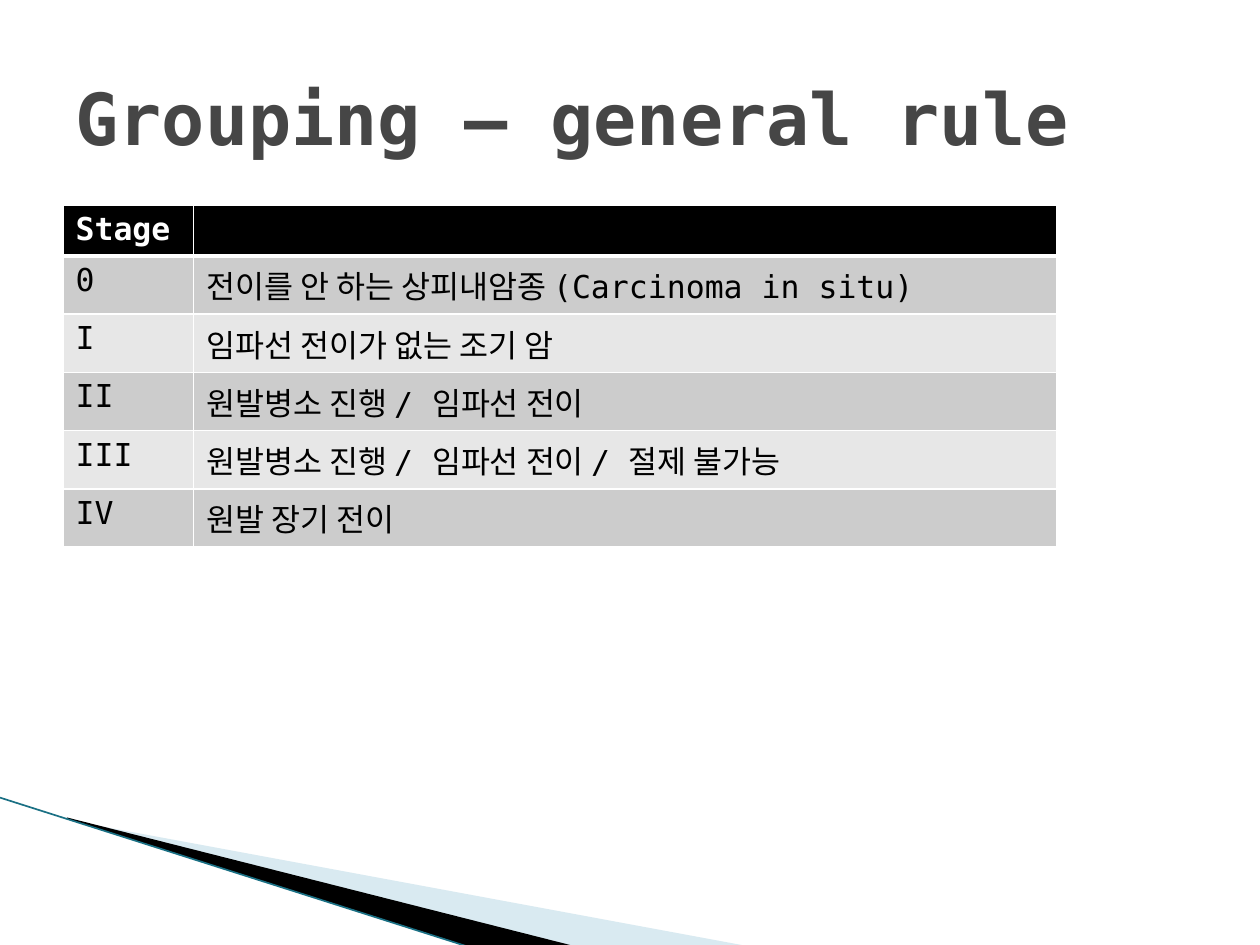
from lxml import etree
from pptx import Presentation
from pptx import util as u
from pptx.dml.color import RGBColor
from pptx.enum import shapes, text
from pptx.oxml import ns

FONT = "DejaVu Sans Mono"
BLACK = RGBColor(0x00, 0x00, 0x00)
WHITE = RGBColor(0xFF, 0xFF, 0xFF)
GRAY = RGBColor(0x46, 0x46, 0x46)
DARK = RGBColor(0xCC, 0xCC, 0xCC)
LIGHT = RGBColor(0xE7, 0xE7, 0xE7)
SKY = RGBColor(0xA0, 0xCB, 0xDC)
TEAL = RGBColor(0x1A, 0x70, 0x84)

STAGES = [
    ("Stage", ""),
    ("0", "전이를 안 하는 상피내암종 (Carcinoma in situ)"),
    ("I", "임파선 전이가 없는 조기 암"),
    ("II", "원발병소 진행 / 임파선 전이"),
    ("III", "원발병소 진행 / 임파선 전이 / 절제 불가능"),
    ("IV", "원발 장기 전이"),
]


def style(font, color, **form):
    font.color.rgb = color
    for key, val in {"name": FONT, **form}.items():
        setattr(font, key, val)


def add_title(slide, box, words):
    title = slide.shapes.title
    for key, val in zip(("left", "top", "width", "height"), box):
        setattr(title, key, u.Cm(val))
    frame = title.text_frame
    frame.text = words
    form = {"auto_size": text.MSO_AUTO_SIZE.NONE, "word_wrap": True,
            "vertical_anchor": text.MSO_ANCHOR.MIDDLE}
    for key, val in form.items():
        setattr(frame, key, val)
    par = frame.paragraphs[0]
    par.alignment = text.PP_ALIGN.LEFT
    style(par.runs[0].font, GRAY, size=u.Pt(41), bold=True)


def add_edges(cell, widths):
    """Draw white cell borders, with widths in points by side."""
    props = cell._tc.get_or_add_tcPr()
    for side, width in widths.items():
        line = etree.SubElement(props, ns.qn(f"a:ln{side}"), w=str(u.Pt(width)))
        fill = etree.SubElement(line, ns.qn("a:solidFill"))
        etree.SubElement(fill, ns.qn("a:srgbClr"), val=str(WHITE))


def add_stages(slide, box, rows, first):
    """Fill the box with the stage table; first is the first column's width."""
    left, top, width, height = box
    frame = slide.shapes.add_table(len(rows), 2, *map(u.Cm, box))
    table = frame.table
    for col, size in zip(table.columns, (first, width - first)):
        col.width = u.Cm(size)
    for r, row in enumerate(rows):
        table.rows[r].height = u.Cm(height / len(rows))
        head = r == 0
        back = BLACK if head else (DARK if r % 2 else LIGHT)
        for c, words in enumerate(row):
            cell = table.cell(r, c)
            add_edges(cell, {"L": 1, "R": 1, "T": 3 if r == 1 else 1,
                             "B": 3 if head else 1})
            cell.fill.solid()
            cell.fill.fore_color.rgb = back
            par = cell.text_frame.paragraphs[0]
            par.text = words
            style(par.font, WHITE if head else BLACK, size=u.Pt(18), bold=head)
            for run in par.runs:
                style(run.font, WHITE if head else BLACK, size=u.Pt(18), bold=head)


def add_wedge(slide, left, top, points, color, alpha=100):
    """Draw a closed outline; alpha is the opacity in percent."""
    spots = [(u.Cm(left + x), u.Cm(top + y)) for x, y in points]
    pen = slide.shapes.build_freeform(*spots[0])
    pen.add_line_segments(spots[1:], close=True)
    shape = pen.convert_to_shape()
    shape.shadow.inherit = False
    shape.fill.solid()
    shape.fill.fore_color.rgb = color
    shape.line.fill.background()
    if alpha < 100:
        tint = shape._element.spPr.find(".//" + ns.qn("a:srgbClr"))
        etree.SubElement(tint, ns.qn("a:alpha"), val=str(alpha * 1000))


def add_corner(slide, box):
    """Draw the swoosh in the lower left corner."""
    left, top, width, height = box
    add_wedge(slide, left, top,
              [(1.4, 0.46), (width, height), (11.58, height), (1.4, 0.43)], SKY, 40)
    add_wedge(slide, left, top,
              [(1.35, 0.4), (11.61, height), (9.45, height), (1.37, 0.43)], BLACK)
    line = slide.shapes.add_connector(
        shapes.MSO_CONNECTOR.STRAIGHT, u.Cm(left), u.Cm(top),
        u.Cm(left + 9.42), u.Cm(top + height))
    line.line.color.rgb = TEAL
    line.line.width = u.Pt(0.95)
    etree.SubElement(line._element.spPr, ns.qn("a:effectLst"))


def main():
    deck = Presentation()
    deck.slide_width, deck.slide_height = u.Cm(25.4), u.Cm(19.05)
    slide = deck.slides.add_slide(deck.slide_layouts[5])
    add_corner(slide, (0, 16.08, 15.11, 3))
    add_stages(slide, (1.27, 4.13, 20.03, 6.18), STAGES, 2.63)
    add_title(slide, (1.27, 0.76, 22.86, 3.18), "Grouping – general rule")
    deck.save("out.pptx")


if __name__ == "__main__":
    main()
